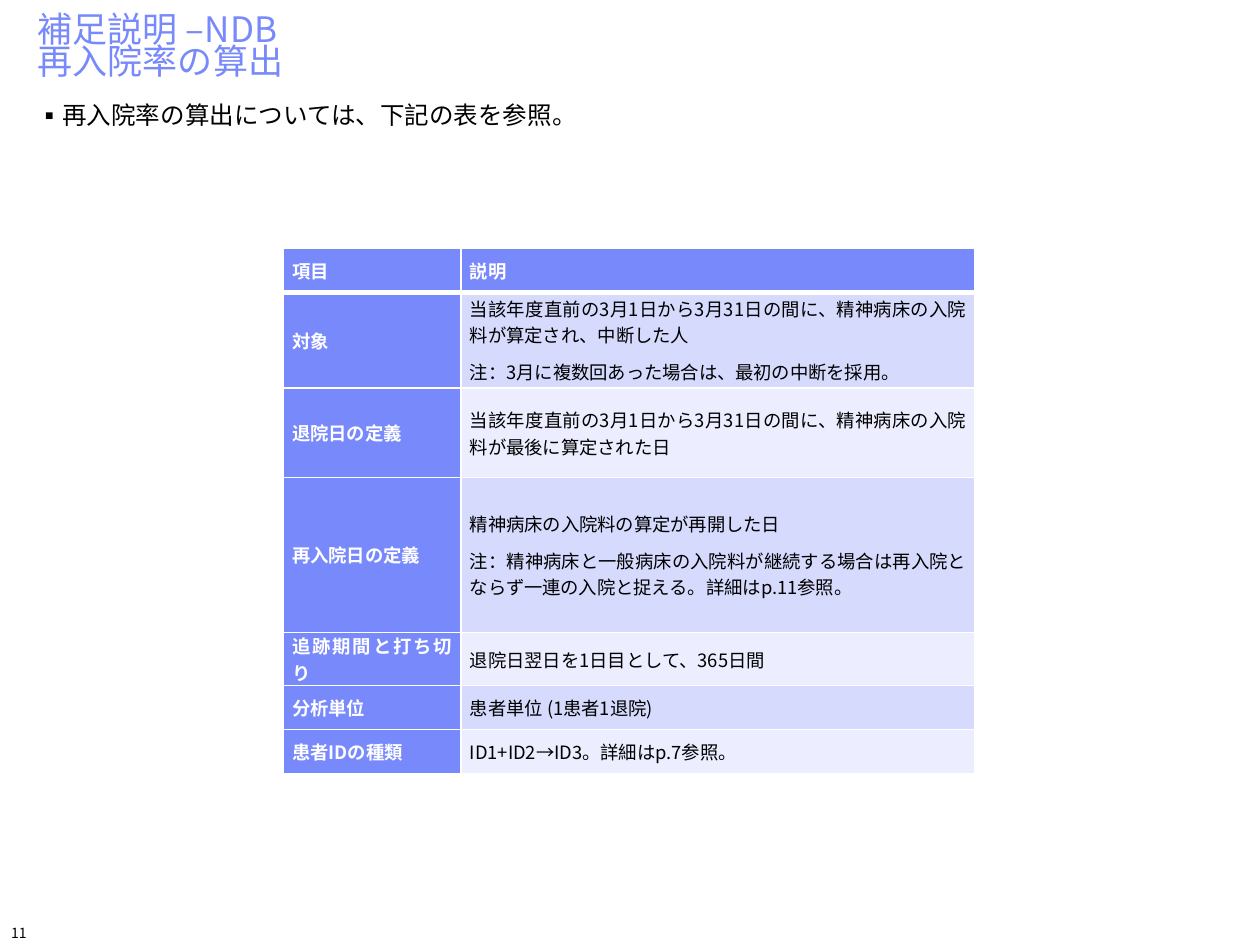
from dataclasses import dataclass

from lxml import etree
from pptx import Presentation, util as u
from pptx.dml.color import RGBColor
from pptx.enum import text
from pptx.oxml.ns import qn

FONT = "Noto Sans CJK JP"
ACCENT, WHITE, BLACK = "7889FB", "FFFFFF", "000000"
BANDS = ("D6DAFD", "ECEDFE")


@dataclass
class Row:
    label: str
    details: list[str]
    height: float


ROWS = [
    Row("項目", ["説明"], 0.35),
    Row("対象", ["当該年度直前の3月1日から3月31日の間に、精神病床の入院料が算定され、中断した人",
               "注：3月に複数回あった場合は、最初の中断を採用。"], 0.76),
    Row("退院日の定義", ["当該年度直前の3月1日から3月31日の間に、精神病床の入院料が最後に算定された日"], 0.71),
    Row("再入院日の定義", ["精神病床の入院料の算定が再開した日",
                    "注：精神病床と一般病床の入院料が継続する場合は再入院とならず"
                    "一連の入院と捉える。詳細はp.11参照。"], 1.23),
    Row("追跡期間と打ち切り", ["退院日翌日を1日目として、365日間"], 0.35),
    Row("分析単位", ["患者単位 (1患者1退院)"], 0.35),
    Row("患者IDの種類", ["ID1+ID2→ID3。詳細はp.7参照。"], 0.35),
]


def color(value: str) -> RGBColor:
    return RGBColor.from_string(value)


def write(paragraph, content: str, *, size: float, fill: str = BLACK, bold: bool = False,
          align=text.PP_ALIGN.LEFT, spacing: float = 1.0, after: float = 0) -> None:
    """Put formatted text into a paragraph."""
    paragraph.text = content
    paragraph.alignment = align
    paragraph.line_spacing = spacing
    paragraph.space_before = u.Pt(0)
    paragraph.space_after = u.Pt(after)
    for run in paragraph.runs:
        run.font.size = u.Pt(size)
        run.font.name = FONT
        run.font.bold = bold
        run.font.color.rgb = color(fill)
        etree.SubElement(run.font._element, qn("a:ea"), typeface=FONT)


def place(shape, left: float, top: float, width: float, height: float):
    """Position a shape and return its top-anchored, wrapping text frame."""
    shape.left, shape.top = u.Inches(left), u.Inches(top)
    shape.width, shape.height = u.Inches(width), u.Inches(height)
    frame = shape.text_frame
    frame.word_wrap = True
    frame.auto_size = text.MSO_AUTO_SIZE.NONE
    frame.vertical_anchor = text.MSO_ANCHOR.TOP
    return frame


def add_bullet(paragraph, symbol: str, indent: float) -> None:
    properties = paragraph._p.get_or_add_pPr()
    properties.set("marL", str(u.Inches(indent)))
    properties.set("indent", str(-u.Inches(indent)))
    bullet_color = etree.SubElement(properties, qn("a:buClr"))
    etree.SubElement(bullet_color, qn("a:srgbClr"), val=BLACK)
    etree.SubElement(properties, qn("a:buFont"), typeface=FONT)
    etree.SubElement(properties, qn("a:buChar"), char=symbol)


def set_borders(cell, top: float, bottom: float) -> None:
    properties = cell._tc.get_or_add_tcPr()
    sides = (("L", 1), ("R", 1), ("T", top), ("B", bottom))
    for index, (side, width) in enumerate(sides):
        line = etree.Element(qn(f"a:ln{side}"), w=str(u.Pt(width)))
        fill = etree.SubElement(line, qn("a:solidFill"))
        etree.SubElement(fill, qn("a:srgbClr"), val=WHITE)
        properties.insert(index, line)


def fill_cell(cell, lines: list[str], background: str, header: bool) -> None:
    cell.fill.solid()
    cell.fill.fore_color.rgb = color(background)
    cell.vertical_anchor = text.MSO_ANCHOR.MIDDLE
    cell.margin_left = cell.margin_right = u.Inches(0.07)
    cell.margin_top = cell.margin_bottom = 0
    frame = cell.text_frame
    for index, line in enumerate(lines):
        paragraph = frame.add_paragraph() if index else frame.paragraphs[0]
        write(paragraph, line, size=10.5, fill=WHITE if header else BLACK, bold=header,
              align=text.PP_ALIGN.JUSTIFY, after=6)


def add_definitions(slide, rows: list[Row]) -> None:
    table = slide.shapes.add_table(len(rows), 2, u.Inches(2.25), u.Inches(1.97),
                                   u.Inches(5.49), u.Inches(4.1)).table
    for column, width in zip(table.columns, (1.41, 4.08)):
        column.width = u.Inches(width)
    for index, row in enumerate(rows):
        table.rows[index].height = u.Inches(row.height)
        band = BANDS[(index - 1) % 2] if index else ACCENT
        label, detail = table.cell(index, 0), table.cell(index, 1)
        fill_cell(label, [row.label], ACCENT, True)
        fill_cell(detail, row.details, band, index == 0)
        for cell in (label, detail):
            set_borders(cell, 3 if index == 1 else 1, 3 if index == 0 else 1)


def main() -> None:
    presentation = Presentation()
    presentation.slide_width, presentation.slide_height = u.Inches(10), u.Inches(7.5)
    slide = presentation.slides.add_slide(presentation.slide_layouts[1])

    # Title and lead sentence
    title = place(slide.shapes.title, 0.2, 0.09, 9.5, 0.56)
    write(title.paragraphs[0], "補足説明 –NDB\v再入院率の算出", size=20, fill=ACCENT, spacing=0.75)
    body = place(slide.placeholders[1], 0.2, 0.77, 9.5, 4.9)
    lead = body.paragraphs[0]
    write(lead, "再入院率の算出については、下記の表を参照。", size=14, spacing=0.9)
    add_bullet(lead, "▪", 0.19)

    # Definitions table
    add_definitions(slide, ROWS)

    # Page number
    number = place(slide.shapes.add_textbox(0, 0, 0, 0), -0.01, 7.29, 0.4, 0.2)
    write(number.paragraphs[0], "11", size=8)

    presentation.save("out.pptx")


if __name__ == "__main__":
    main()
